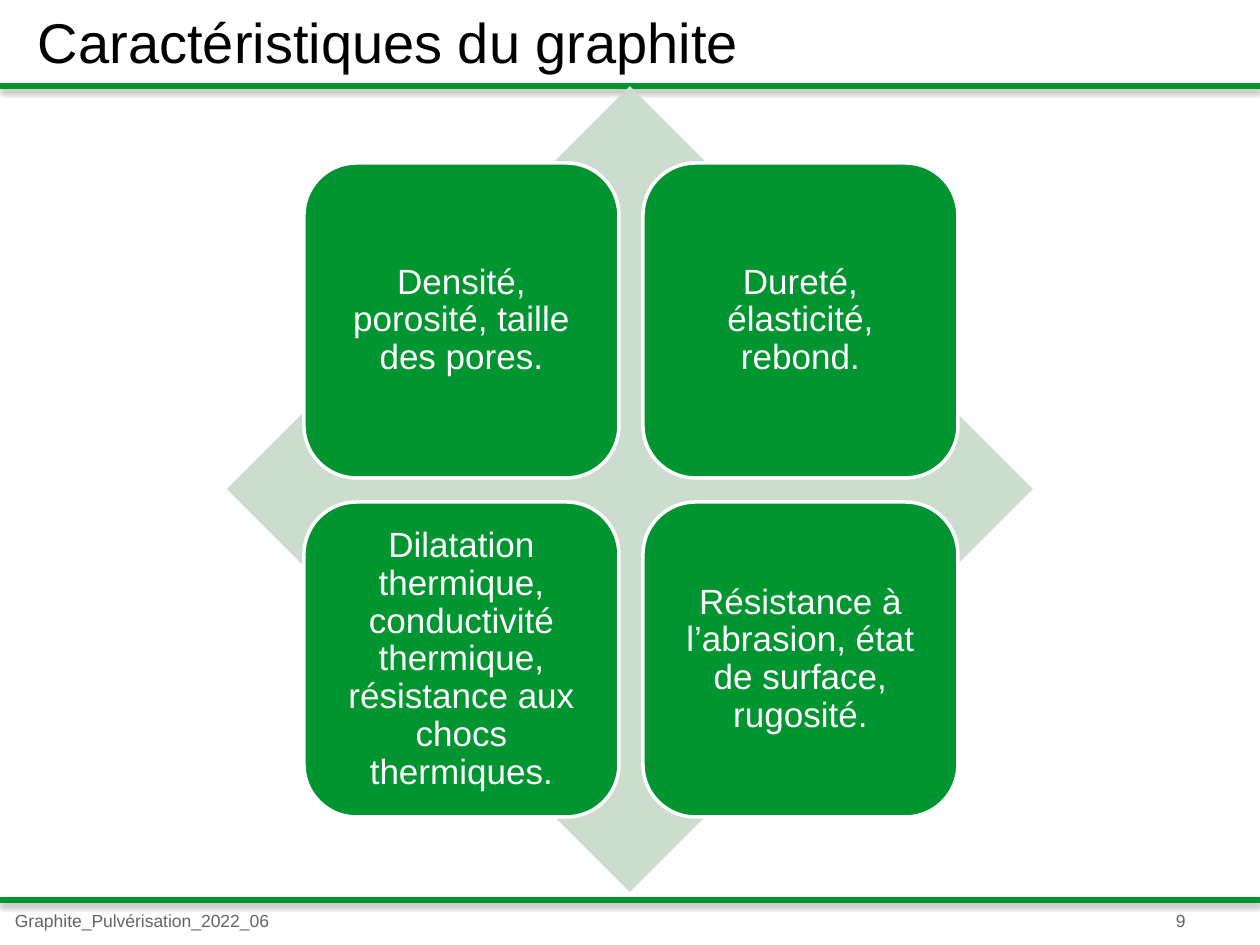
from lxml import etree
from pptx import Presentation
from pptx import util as u
from pptx.dml.color import RGBColor
from pptx.enum import shapes, text
from pptx.oxml.ns import qn

PX = u.Inches(1) / 126
GREEN, PALE, GREY, WHITE, BLACK = "009530", "CCDDCD", "626469", "FFFFFF", "000000"


def px(*lengths):
    return [u.Emu(round(n * PX)) for n in lengths]


def paint(color_format, value):
    color_format.rgb = RGBColor.from_string(value)


def write(tf, content, size=20, color=BLACK, font="Arial", align=text.PP_ALIGN.LEFT,
          anchor=text.MSO_ANCHOR.TOP, margins=(0, 0), spacing=1.0):
    """Fill a text frame; margins are (horizontal, vertical) in px."""
    tf.word_wrap = True
    tf.vertical_anchor = anchor
    tf.margin_left = tf.margin_right = px(margins[0])[0]
    tf.margin_top = tf.margin_bottom = px(margins[1])[0]
    p = tf.paragraphs[0]
    p.alignment = align
    p.line_spacing = spacing
    r = p.add_run()
    r.text = content
    r.font.name = font
    r.font.size = u.Pt(size)
    paint(r.font.color, color)


class Deck:
    def __init__(self, width, height):
        self.prs = Presentation()
        self.prs.slide_width, self.prs.slide_height = px(width, height)
        self.s = self.prs.slides.add_slide(self.prs.slide_layouts[6])

    def label(self, box, content, **style):
        write(self.s.shapes.add_textbox(*px(*box)).text_frame, content, **style)

    def shape(self, kind, box, fill, line=None):
        sp = self.s.shapes.add_shape(kind, *px(*box))
        sp.shadow.inherit = False
        sp.fill.solid()
        paint(sp.fill.fore_color, fill)
        if line:
            paint(sp.line.color, line)
            sp.line.width = u.Pt(2)
        else:
            sp.line.fill.background()
        return sp

    def rule(self, y, width):
        """Horizontal green line with a soft shadow below it."""
        line = self.s.shapes.add_connector(shapes.MSO_CONNECTOR.STRAIGHT, *px(0, y, width, y))
        paint(line.line.color, GREEN)
        line.line.width = u.Pt(3)
        effects = etree.SubElement(line._element.spPr, qn("a:effectLst"))
        shadow = etree.SubElement(effects, qn("a:outerShdw"), blurRad=str(u.Pt(3.1)),
                                  dist=str(u.Pt(1.8)), dir="5400000", rotWithShape="0")
        tint = etree.SubElement(shadow, qn("a:srgbClr"), val=BLACK)
        etree.SubElement(tint, qn("a:alpha"), val="35000")

    def tile(self, box, content):
        sp = self.shape(shapes.MSO_SHAPE.ROUNDED_RECTANGLE, box, GREEN, WHITE)
        write(sp.text_frame, content, color=WHITE, align=text.PP_ALIGN.CENTER,
              anchor=text.MSO_ANCHOR.MIDDLE, margins=(10, 10), spacing=0.9)


def main():
    deck = Deck(1260, 945)
    deck.label((1176, 910, 49, 15), "9", size=10, color=GREY)
    deck.label((15, 910, 416, 43), "Graphite_Pulvérisation_2022_06", size=10, color=GREY)
    for y in (86, 900):
        deck.rule(y, 1260)
    deck.label((25, 1, 903, 81), "Caractéristiques du graphite", size=32, margins=(13, 6))

    deck.shape(shapes.MSO_SHAPE.DIAMOND, (227, 86, 806, 806), PALE)
    properties = [
        "Densité, porosité, taille des pores.",
        "Dureté, élasticité, rebond.",
        "Dilatation thermique, conductivité thermique, résistance aux chocs thermiques.",
        "Résistance à l’abrasion, état de surface, rugosité.",
    ]
    side, pitch = 315, 339
    for i, content in enumerate(properties):
        row, col = divmod(i, 2)
        deck.tile((304 + col * pitch, 163 + row * pitch, side, side), content)

    deck.prs.save("out.pptx")


if __name__ == "__main__":
    main()
